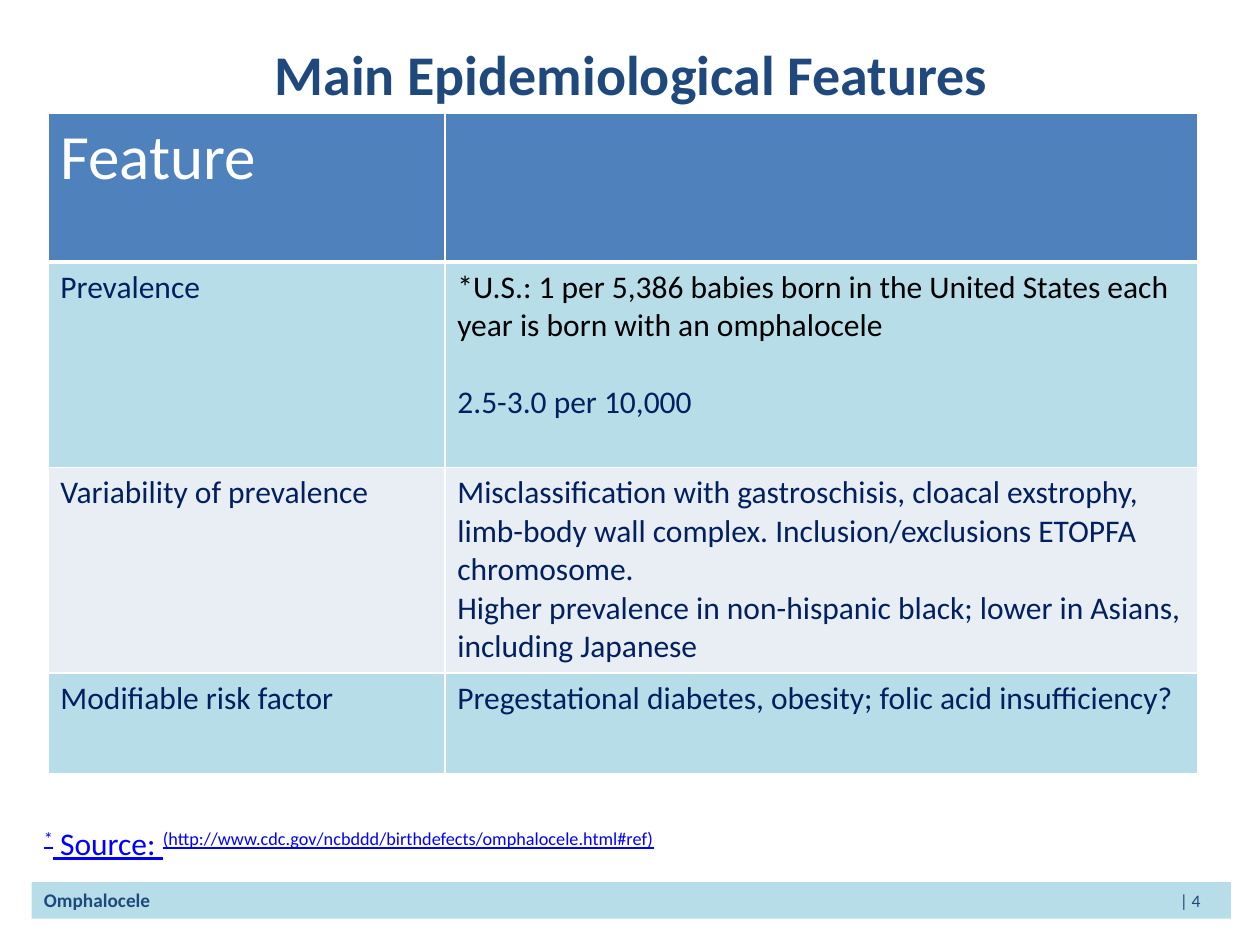
from dataclasses import dataclass

import pptx
import pptx.dml.color
import pptx.enum.shapes
import pptx.enum.text
import pptx.oxml
import pptx.oxml.ns
import pptx.util
from pptx.util import Inches

COLORS = {
    "navy": "1F497D", "ink": "002060", "black": "000000", "white": "FFFFFF",
    "head": "4F81BD", "aqua": "B7DEE8", "pale": "E9EDF4", "link": "0000FF",
}
FONT = "Calibri"
Pt = pptx.util.Pt
Text = pptx.enum.text


@dataclass
class Para:
    text: str
    color: str = "ink"
    size: int = 18
    before: int = 0


@dataclass
class Row:
    height: float
    fill: str
    cells: list[list[Para]]
    top: int = 1
    bottom: int = 1


ROWS = [
    Row(1.18, "head", [[Para("Feature", "white", 36)], []], bottom=3),
    Row(1.63, "aqua", [
        [Para("Prevalence")],
        [Para("*U.S.: 1 per 5,386 babies born in the United States each "
              "year is born with an omphalocele", "black"),
         Para("2.5-3.0 per 10,000", before=22)],
    ], top=3),
    Row(1.63, "pale", [
        [Para("Variability of prevalence")],
        [Para("Misclassification with gastroschisis, cloacal exstrophy, "
              "limb-body wall complex. Inclusion/exclusions ETOPFA chromosome."),
         Para("Higher prevalence in non-hispanic black; lower in Asians, "
              "including Japanese")],
    ]),
    Row(0.8, "aqua", [
        [Para("Modifiable risk factor")],
        [Para("Pregestational diabetes, obesity; folic acid insufficiency?")],
    ]),
]
WIDTHS = [3.15, 5.98]


def rgb(name: str):
    return pptx.dml.color.RGBColor.from_string(COLORS[name])


def style(run, size: int, color: str, bold: bool = False) -> None:
    font = run.font
    font.name, font.size, font.bold = FONT, Pt(size), bold
    font.color.rgb = rgb(color)


def add_run(para, text: str, size: int, color: str, bold: bool = False):
    run = para.add_run()
    run.text = text
    style(run, size, color, bold)
    return run


def add_edges(cell, row: Row) -> None:
    """Draw white borders on all four sides of a cell."""
    props = cell._tc.get_or_add_tcPr()
    edges = {"L": 1, "R": 1, "T": row.top, "B": row.bottom}
    for spot, (side, width) in enumerate(edges.items()):
        props.insert(spot, pptx.oxml.parse_xml(
            f'<a:ln{side} {pptx.oxml.ns.nsdecls("a")} w="{Pt(width)}">'
            f'<a:solidFill><a:srgbClr val="{COLORS["white"]}"/></a:solidFill>'
            f'</a:ln{side}>'))


def fill_cell(cell, paras: list[Para], row: Row) -> None:
    cell.fill.solid()
    cell.fill.fore_color.rgb = rgb(row.fill)
    add_edges(cell, row)
    cell.text_frame.text = "\n".join(item.text for item in paras)
    for para, item in zip(cell.text_frame.paragraphs, paras):
        para.space_before = Pt(item.before)
        style(para.runs[0], item.size, item.color)


def add_title(slide) -> None:
    title = slide.shapes.title
    title.left, title.top = Inches(0.51), Inches(0.29)
    title.width, title.height = Inches(9), Inches(0.61)
    frame = title.text_frame
    frame.text = "Main Epidemiological Features"
    frame.auto_size = Text.MSO_AUTO_SIZE.NONE
    frame.vertical_anchor = Text.MSO_ANCHOR.BOTTOM
    para = frame.paragraphs[0]
    para.alignment = Text.PP_ALIGN.CENTER
    para.line_spacing = Pt(30)
    style(para.runs[0], 32, "navy", True)


def add_grid(slide) -> None:
    table = slide.shapes.add_table(
        len(ROWS), len(WIDTHS), Inches(0.38), Inches(0.9),
        Inches(sum(WIDTHS)), Inches(sum(row.height for row in ROWS))).table
    table.first_row = table.horz_banding = False
    for col, width in zip(table.columns, WIDTHS):
        col.width = Inches(width)
    for line, row in zip(table.rows, ROWS):
        line.height = Inches(row.height)
        for cell, paras in zip(line.cells, row.cells):
            fill_cell(cell, paras, row)


def add_source(slide) -> None:
    box = slide.shapes.add_textbox(
        Inches(0.25), Inches(6.49), Inches(5.69), Inches(0.4))
    box.text_frame.word_wrap = False
    para = box.text_frame.paragraphs[0]
    parts = [
        ("*", True), (" Source: ", False),
        ("(http://www.cdc.gov/ncbddd/birthdefects/omphalocele.html#ref)", True),
    ]
    for text, raised in parts:
        run = add_run(para, text, 18, "link")
        run.font.underline = True
        if raised:
            run._r.get_or_add_rPr().set("baseline", "30000")


def add_footer(slide) -> None:
    bar = slide.shapes.add_shape(
        pptx.enum.shapes.MSO_SHAPE.RECTANGLE,
        Inches(0.25), Inches(7), Inches(9.52), Inches(0.29))
    bar.shadow.inherit = False
    bar.fill.solid()
    bar.fill.fore_color.rgb = rgb("aqua")
    bar.line.fill.background()
    frame = bar.text_frame
    frame.word_wrap = True
    frame.vertical_anchor = Text.MSO_ANCHOR.MIDDLE
    para = frame.paragraphs[0]
    para.alignment = Text.PP_ALIGN.LEFT
    para._p.get_or_add_pPr().append(pptx.oxml.parse_xml(
        f'<a:tabLst {pptx.oxml.ns.nsdecls("a")}>'
        f'<a:tab pos="{Inches(9.18)}" algn="r"/></a:tabLst>'))
    add_run(para, "Omphalocele\t", 11, "navy", True)
    add_run(para, "| 4", 10, "navy")


def main() -> None:
    deck = pptx.Presentation()
    deck.slide_width, deck.slide_height = Inches(10), Inches(7.5)
    slide = deck.slides.add_slide(deck.slide_layouts.get_by_name("Title Only"))
    add_footer(slide)
    add_title(slide)
    add_grid(slide)
    add_source(slide)
    deck.save("out.pptx")


if __name__ == "__main__":
    main()
